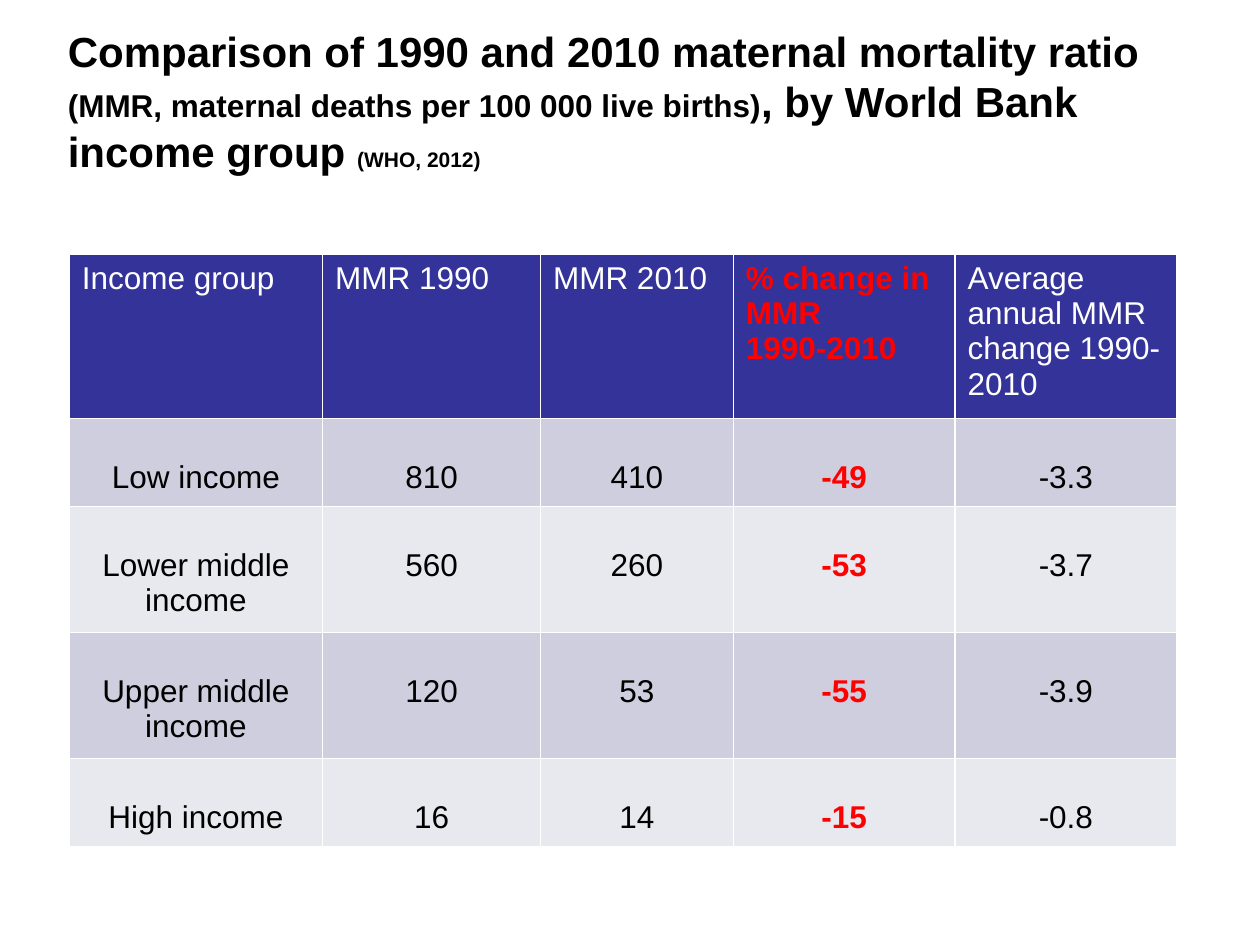
from lxml import etree
from pptx import Presentation
from pptx import util as u
from pptx.dml.color import RGBColor
from pptx.enum import text
from pptx.oxml.ns import qn

BLACK, WHITE, RED = "000000", "FFFFFF", "FF0000"
NAVY, BANDS = "333399", ("CECEDE", "E8E8EF")


def add_span(para, words, size=18, color=BLACK, bold=False):
    span = para.add_run()
    span.text = words
    span.font.name = "Arial"
    span.font.size = u.Pt(size)
    span.font.bold = bold
    span.font.color.rgb = RGBColor.from_string(color)


def paint_cell(cell, fill):
    """Give a cell thin white borders and a solid fill."""
    properties = cell._tc.get_or_add_tcPr()
    for side in ("a:lnL", "a:lnR", "a:lnT", "a:lnB"):
        line = etree.SubElement(properties, qn(side), w=str(u.Pt(1)))
        solid = etree.SubElement(line, qn("a:solidFill"))
        etree.SubElement(solid, qn("a:srgbClr"), val=WHITE)
    cell.fill.solid()
    cell.fill.fore_color.rgb = RGBColor.from_string(fill)


deck = Presentation()
deck.slide_width, deck.slide_height = u.Inches(10), u.Inches(7.5)
page = deck.slides.add_slide(deck.slide_layouts[6])

# Title
box = page.shapes.add_textbox(u.Inches(0.44), u.Inches(0.15), u.Inches(9), u.Inches(1.37))
box.text_frame.word_wrap = True
para = box.text_frame.paragraphs[0]
para.space_before = u.Pt(3)
for words, size in (
    ("Comparison of 1990 and 2010 maternal mortality ratio ", 24),
    ("(MMR, maternal deaths per 100 000 live births)", 18),
    (", by World Bank income group ", 24),
    ("(WHO, 2012)", 12),
):
    add_span(para, words, size=size, bold=True)

# Table grid
widths = (2.01, 1.73, 1.53, 1.76, 1.76)
heights = (1.3, 0.7, 1, 1, 0.7)
rows = (
    ("Income group", "MMR 1990", "MMR 2010", "% change in MMR\n1990-2010",
     "Average annual MMR change 1990-2010"),
    ("Low income", "810", "410", "-49", "-3.3"),
    ("Lower middle income", "560", "260", "-53", "-3.7"),
    ("Upper middle income", "120", "53", "-55", "-3.9"),
    ("High income", "16", "14", "-15", "-0.8"),
)
table = page.shapes.add_table(
    len(rows), len(widths), u.Inches(0.55), u.Inches(2.02),
    u.Inches(sum(widths)), u.Inches(sum(heights)),
).table
for column, width in zip(table.columns, widths):
    column.width = u.Inches(width)
for row, height in zip(table.rows, heights):
    row.height = u.Inches(height)

# Cells: navy header, banded body, change column in bold red
CHANGE_COLUMN = 3
for r, values in enumerate(rows):
    header = r == 0
    for c, value in enumerate(values):
        cell = table.cell(r, c)
        paint_cell(cell, NAVY if header else BANDS[(r - 1) % 2])
        if not header:
            cell.margin_top = u.Inches(0.33)
        change = c == CHANGE_COLUMN
        color = RED if change else WHITE if header else BLACK
        frame = cell.text_frame
        for i, words in enumerate(value.split("\n")):
            para = frame.add_paragraph() if i else frame.paragraphs[0]
            para.alignment = text.PP_ALIGN.LEFT if header else text.PP_ALIGN.CENTER
            add_span(para, words, color=color, bold=change)

deck.save("out.pptx")
